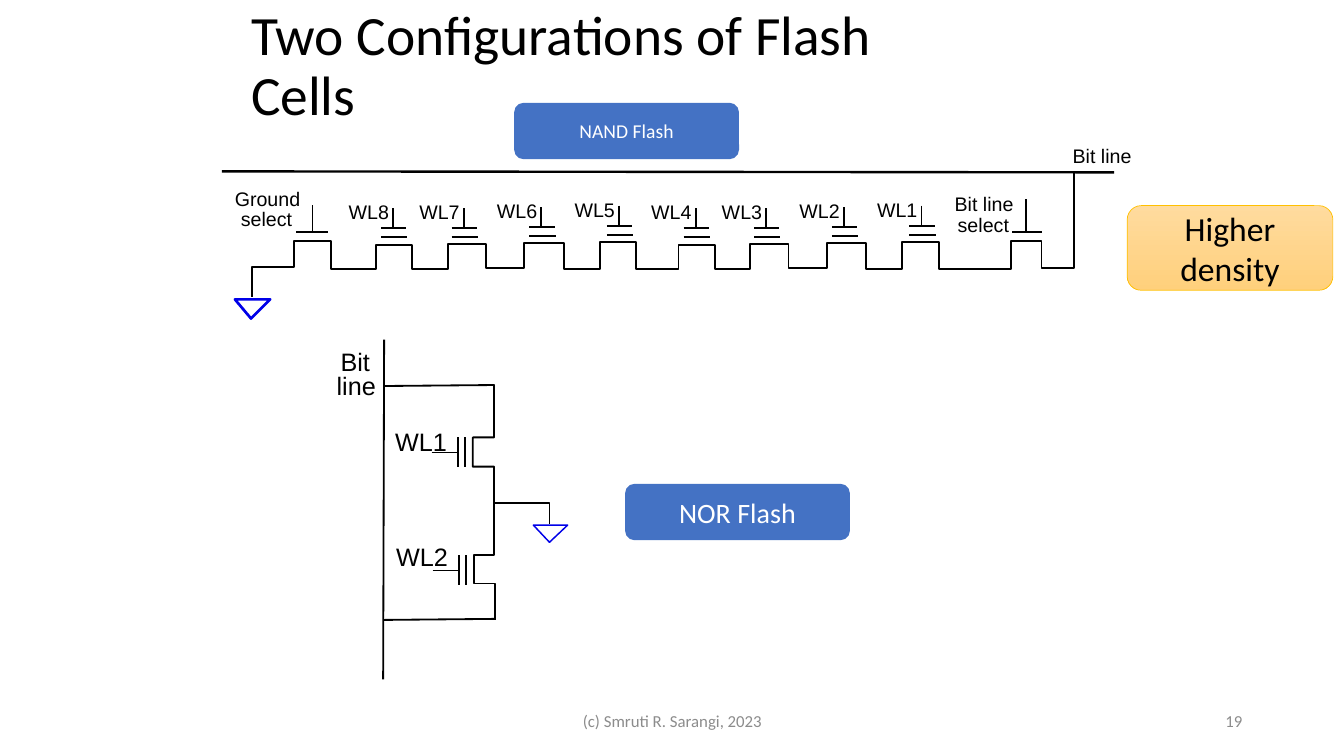
from lxml import etree
from pptx import Presentation
from pptx.dml.color import RGBColor
from pptx.enum.shapes import MSO_CONNECTOR, MSO_SHAPE
from pptx.enum.text import MSO_ANCHOR, MSO_AUTO_SIZE, PP_ALIGN
from pptx.oxml.ns import qn
from pptx.util import Inches, Pt

STRAIGHT, ROUNDED = MSO_CONNECTOR.STRAIGHT, MSO_SHAPE.ROUNDED_RECTANGLE
MIDDLE, TO_FIT = MSO_ANCHOR.MIDDLE, MSO_AUTO_SIZE.SHAPE_TO_FIT_TEXT
LEFT, CENTER, RIGHT = PP_ALIGN.LEFT, PP_ALIGN.CENTER, PP_ALIGN.RIGHT
BLACK, WHITE = RGBColor(0, 0, 0), RGBColor(255, 255, 255)
GREY = RGBColor(0x8C, 0x8C, 0x8C)
BLUE = RGBColor(0x44, 0x72, 0xC4)
GROUND_BLUE = RGBColor(0, 0, 0xE8)
AMBER = RGBColor(0xFF, 0xC0, 0)
AMBER_TOP, AMBER_END = RGBColor(0xFF, 0xDB, 0x9E), RGBColor(0xFF, 0xD0, 0x7C)

TITLE = "Two Configurations of Flash Cells"
FOOTERS = [  # text, left, width, alignment
    ("(c) Smruti R. Sarangi, 2023", 4.42, 4.5, CENTER),
    ("19", 9.42, 3, RIGHT),
]
BOXES = [  # text, left, top, width, height, size
    ("NAND Flash", 5.1, 1.02, 2.23, 0.56, 14),
    ("NOR Flash", 6.2, 4.8, 2.23, 0.56, 20),
    ("Higher density", 11.18, 2.04, 2.04, 0.84, 24),
]

# NAND: two identical banks of four cells, one bank width apart
NAND_PT, NOR_PT = 1.34, 1.3
BANK_WIDTH = 3.0
BANKS = [("WL8", "WL7", "WL6", "WL5"), ("WL4", "WL3", "WL2", "WL1")]
BANK_GATES = [(3.78, 2.355), (4.48, 2.355), (5.25, 2.345), (6.02, 2.33)]
BANK_WIRE = [(3.57, 2.67), (3.73, 2.67), (3.73, 2.43), (4.09, 2.43), (4.09, 2.67),
             (4.44, 2.67), (4.44, 2.42), (4.82, 2.42), (4.82, 2.66), (5.2, 2.66),
             (5.2, 2.41), (5.59, 2.41), (5.59, 2.67), (5.95, 2.67), (5.95, 2.4),
             (6.31, 2.4), (6.31, 2.67), (6.72, 2.67)]
NAND_WIRES = [
    [(9.67, 2.67), (10.03, 2.67), (10.03, 2.39), (10.33, 2.39), (10.33, 2.66),
     (10.65, 2.66), (10.65, 1.71)],
    [(3.61, 2.67), (3.28, 2.67), (3.28, 2.39), (2.92, 2.39), (2.92, 2.65),
     (2.5, 2.65), (2.5, 2.95)],
]
NAND_LINES = [  # x1, y1, x2, y2, weight
    (2.2, 1.7, 11.05, 1.71, 1.69),
    (10.04, 2.3, 10.33, 2.3, NAND_PT),
    (10.18, 2.31, 10.18, 1.97, NAND_PT),
    (2.94, 2.3, 3.25, 2.3, NAND_PT),
    (3.1, 2.29, 3.1, 2.03, 1),
]

# NOR: two cells between the bit line and a shared ground
NOR_GATES = [("WL1", 4.54, 4.34, 4.18), ("WL2", 4.55, 5.51, 5.32)]
NOR_WIRES = [
    [(4.91, 6.15), (4.91, 5.79), (4.7, 5.79), (4.7, 5.51), (4.9, 5.51),
     (4.9, 4.99), (5.45, 4.99), (5.45, 5.2)],
    [(4.9, 4.99), (4.9, 4.63), (4.69, 4.63), (4.69, 4.34), (4.9, 4.34),
     (4.9, 3.82), (3.8, 3.83)],
]
NOR_LINES = [
    (3.81, 6.15, 4.9, 6.14, NOR_PT),
    (3.8, 6.74, 3.81, 3.37, NOR_PT),
]
GROUNDS = [  # triangle, weight
    ([(2.33, 2.97), (2.68, 2.97), (2.49, 3.16)], 1.92),
    ([(5.29, 5.21), (5.63, 5.21), (5.45, 5.38)], 1.05),
]
LABELS = [  # text, left, top, width, size
    ("Bit line", 9.37, 1.86, 0.79, 14), ("select", 9.4, 2.06, 0.71, 14),
    ("Ground", 2.23, 1.81, 0.85, 14), ("select", 2.29, 2, 0.71, 14),
    ("Bit line", 10.54, 1.38, 0.79, 14),
    ("Bit", 3.28, 3.39, 0.5, 18), ("line", 3.24, 3.62, 0.59, 18),
]


def write(tf, text, size, color, font="Calibri", align=LEFT):
    p = tf.paragraphs[0]
    p.alignment = align
    r = p.add_run()
    r.text = text
    r.font.size, r.font.name = Pt(size), font
    r.font.color.rgb = color
    return p


def line(shapes, x1, y1, x2, y2, weight):
    c = shapes.add_connector(STRAIGHT, *map(Inches, (x1, y1, x2, y2)))
    c.line.color.rgb, c.line.width = BLACK, Pt(weight)
    etree.SubElement(c._element.spPr, qn("a:effectLst"))


def outline(shapes, points, weight, color=BLACK, close=False):
    pts = [(Inches(x), Inches(y)) for x, y in points]
    builder = shapes.build_freeform(*pts[0])
    builder.add_line_segments(pts[1:], close=close)
    sp = builder.convert_to_shape()
    sp.fill.background()
    sp.line.color.rgb, sp.line.width = color, Pt(weight)
    sp.shadow.inherit = False


def label(shapes, text, x, y, w, size):
    height = 0.34 if size == 14 else 0.4
    tf = shapes.add_textbox(*map(Inches, (x, y, w, height))).text_frame
    tf.word_wrap, tf.auto_size = False, TO_FIT
    write(tf, text, size, BLACK, "Arial")


def nand_gate(shapes, name, x, y):
    line(shapes, x, y, x + 0.26, y, NAND_PT)
    line(shapes, x, y - 0.09, x + 0.25, y - 0.09, NAND_PT)
    line(shapes, x + 0.12, y - 0.29, x + 0.12, y - 0.1, NAND_PT)
    label(shapes, name, x - 0.42, y - 0.42, 0.61, 14)


def nor_gate(shapes, name, x, y, label_y):
    for bar_x in (x, x + 0.07):
        line(shapes, bar_x, y, bar_x, y + 0.29, NOR_PT)
    line(shapes, x - 0.26, y + 0.15, x, y + 0.15, NOR_PT)
    label(shapes, name, x - 0.72, label_y, 0.72, 18)


def box(shapes, text, x, y, w, h, size):
    sp = shapes.add_shape(ROUNDED, *map(Inches, (x, y, w, h)))
    sp.shadow.inherit = False
    sp.text_frame.word_wrap = True
    sp.text_frame.vertical_anchor = MIDDLE
    if text.endswith("Flash"):
        sp.fill.solid()
        sp.fill.fore_color.rgb = BLUE
        sp.line.fill.background()
        color = WHITE
    else:
        sp.fill.gradient()
        sp.fill.gradient_angle = 270
        for stop, shade in zip(sp.fill.gradient_stops, (AMBER_TOP, AMBER_END)):
            stop.color.rgb = shade
        sp.line.color.rgb, sp.line.width = AMBER, Pt(0.5)
        color = BLACK
    write(sp.text_frame, text, size, color, align=CENTER)


def main():
    prs = Presentation()
    prs.slide_width, prs.slide_height = Inches(13.33), Inches(7.5)
    s = prs.slides.add_slide(prs.slide_layouts[5])
    shapes = s.shapes

    title = shapes.title
    title.left, title.top, title.width, title.height = map(Inches, (2.39, 0.22, 7.5, 0.9))
    tf = title.text_frame
    tf.word_wrap, tf.auto_size = True, MSO_AUTO_SIZE.NONE
    tf.vertical_anchor, tf.margin_right = MIDDLE, Inches(0.3)
    write(tf, TITLE, 39.6, BLACK).line_spacing = 0.9

    for text, x, w, align in FOOTERS:
        tf = shapes.add_textbox(*map(Inches, (x, 6.95, w, 0.4))).text_frame
        tf.word_wrap, tf.vertical_anchor = True, MIDDLE
        write(tf, text, 12, GREY, align=align)

    for segment in NAND_LINES + NOR_LINES:
        line(shapes, *segment)
    for wire in NAND_WIRES:
        outline(shapes, wire, NAND_PT)
    for wire in NOR_WIRES:
        outline(shapes, wire, NOR_PT)
    for i, names in enumerate(BANKS):
        dx = i * BANK_WIDTH
        outline(shapes, [(x + dx, y) for x, y in BANK_WIRE], NAND_PT)
        for name, (x, y) in zip(names, BANK_GATES):
            nand_gate(shapes, name, x + dx, y)
    for gate in NOR_GATES:
        nor_gate(shapes, *gate)
    for triangle, weight in GROUNDS:
        outline(shapes, triangle, weight, GROUND_BLUE, close=True)
    for item in LABELS:
        label(shapes, *item)
    for item in BOXES:
        box(shapes, *item)

    prs.save("out.pptx")


if __name__ == "__main__":
    main()
